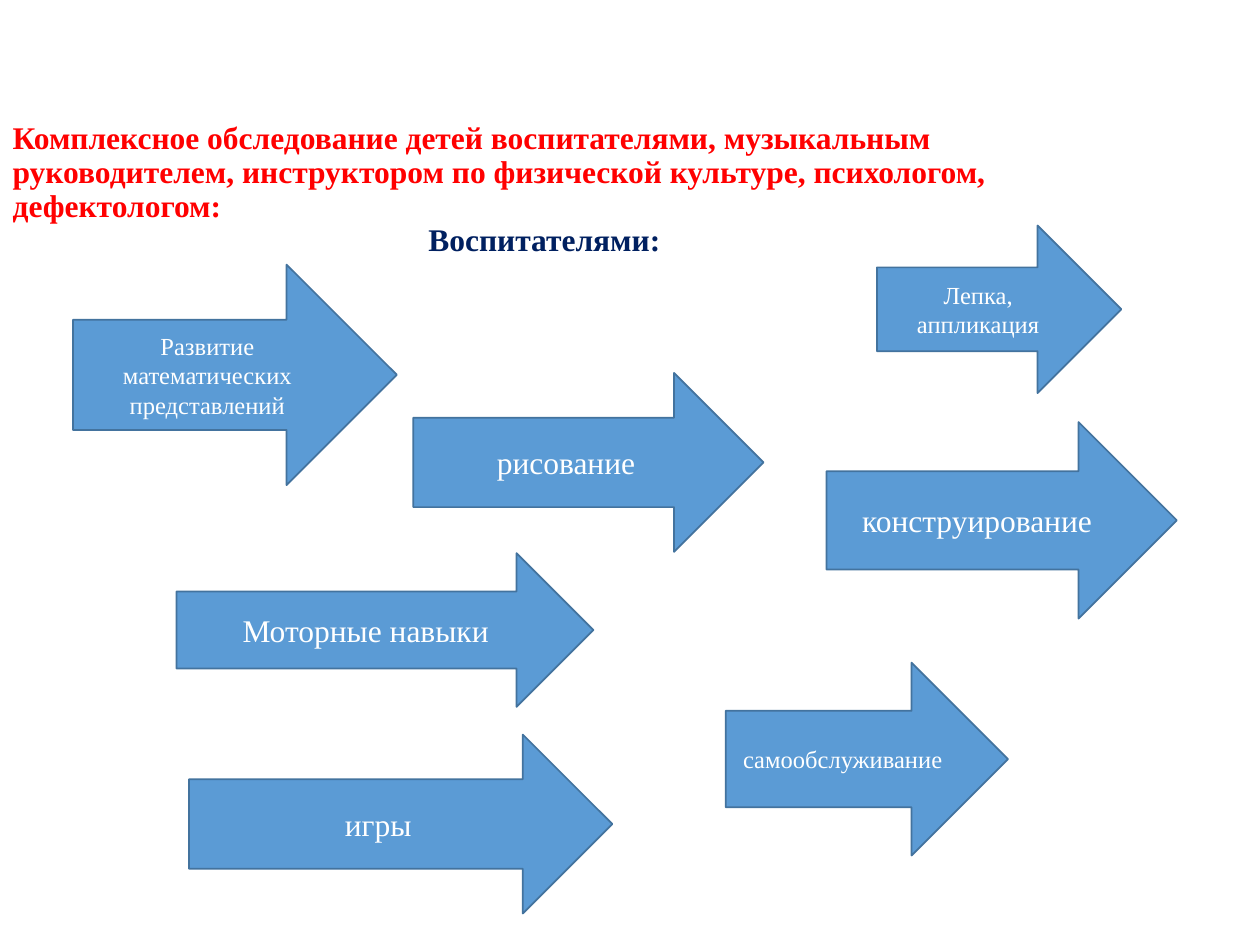
from pptx import Presentation
from pptx.dml.color import RGBColor
from pptx.enum.shapes import MSO_SHAPE
from pptx.enum.text import MSO_ANCHOR, MSO_AUTO_SIZE, PP_ALIGN
from pptx.util import Inches, Pt

RED = RGBColor(0xFF, 0x00, 0x00)
NAVY = RGBColor(0x00, 0x20, 0x60)
BLUE = RGBColor(0x5B, 0x9B, 0xD5)
DARK_BLUE = RGBColor(0x43, 0x73, 0x9E)
WHITE = RGBColor(0xFF, 0xFF, 0xFF)
FONT = "Times New Roman"


def style(paragraph, size, color, alignment, bold=False):
    paragraph.alignment = alignment
    paragraph.font.name = FONT
    paragraph.font.size = Pt(size)
    paragraph.font.bold = bold
    paragraph.font.color.rgb = color


prs = Presentation()
prs.slide_width, prs.slide_height = Inches(10), Inches(7.5)
slide = prs.slides.add_slide(prs.slide_layouts[5])

heading = slide.shapes.title
heading.left, heading.top = Inches(0), Inches(0.92)
heading.width, heading.height = Inches(8.62), Inches(1.72)
frame = heading.text_frame
frame.text = (
    "Комплексное обследование детей воспитателями, музыкальным "
    "руководителем, инструктором по физической культуре, психологом, "
    "дефектологом:\nВоспитателями:"
)
frame.word_wrap = True
frame.auto_size = MSO_AUTO_SIZE.NONE
frame.vertical_anchor = MSO_ANCHOR.TOP
survey, educators = frame.paragraphs
for paragraph, color in ((survey, RED), (educators, NAVY)):
    style(paragraph, 18, color, PP_ALIGN.LEFT, bold=True)
    paragraph.line_spacing = 0.9
educators._p.get_or_add_pPr().set("marL", str(Inches(3.3)))

activities = [
    ("Развитие математических представлений", 14, 0.58, 2.1, 2.57, 1.75),
    ("рисование", 18, 3.28, 2.96, 2.78, 1.42),
    ("Лепка, аппликация", 14, 6.96, 1.79, 1.94, 1.33),
    ("конструирование", 18, 6.56, 3.35, 2.78, 1.56),
    ("Моторные навыки", 18, 1.4, 4.39, 3.31, 1.22),
    ("самообслуживание", 14, 5.76, 5.26, 2.24, 1.53),
    ("игры", 18, 1.5, 5.83, 3.36, 1.42),
]
for activity, size, *box in activities:
    arrow = slide.shapes.add_shape(MSO_SHAPE.RIGHT_ARROW, *map(Inches, box))
    arrow.shadow.inherit = False
    arrow.fill.solid()
    arrow.fill.fore_color.rgb = BLUE
    arrow.line.color.rgb = DARK_BLUE
    arrow.line.width = Pt(1)
    arrow.text_frame.text = activity
    arrow.text_frame.word_wrap = True
    arrow.text_frame.vertical_anchor = MSO_ANCHOR.MIDDLE
    style(arrow.text_frame.paragraphs[0], size, WHITE, PP_ALIGN.CENTER)

prs.save("out.pptx")
